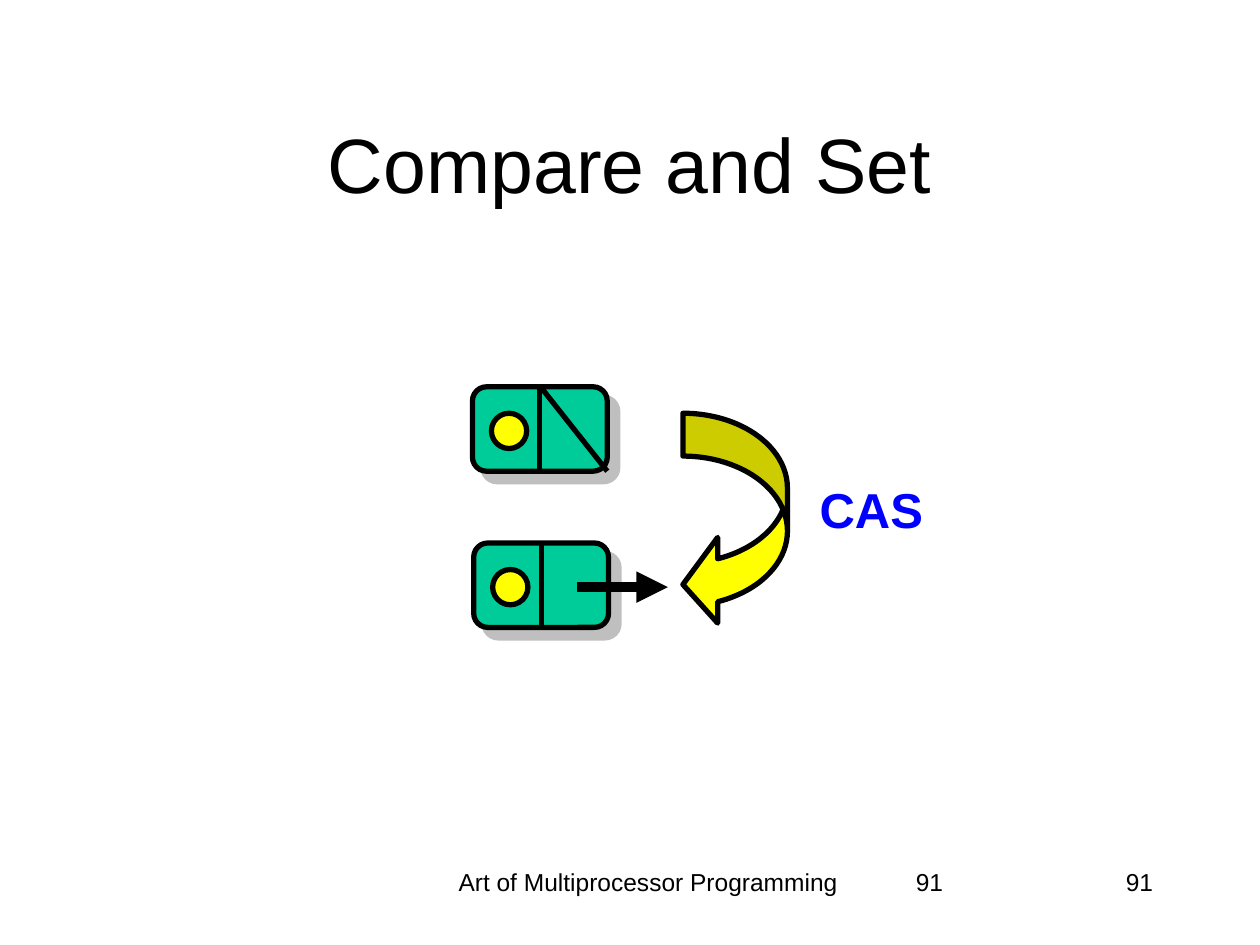
from lxml.etree import SubElement
from pptx import Presentation
from pptx.dml.color import RGBColor
from pptx.enum.shapes import MSO_CONNECTOR, MSO_SHAPE
from pptx.enum.text import MSO_ANCHOR, PP_ALIGN
from pptx.oxml.ns import qn
from pptx.util import Inches, Pt

COLORS = {
    "ink": "000000",
    "node": "00CC99",
    "value": "FFFF00",
    "label": "0000FF",
    "shadow": "808080",
}
NODE_WIDTH, NODE_HEIGHT = 1.07, 0.67
VALUE_SIZE = 0.28


def color(name):
    return RGBColor.from_string(COLORS[name])


def write(frame, text, size=14, align=PP_ALIGN.LEFT, ink="ink", bold=False,
          anchor=MSO_ANCHOR.TOP, wrap=True):
    frame.word_wrap = wrap
    frame.vertical_anchor = anchor
    paragraph = frame.paragraphs[0]
    paragraph.alignment = align
    run = paragraph.add_run()
    run.text = text
    run.font.name = "Arial"
    run.font.size = Pt(size)
    run.font.bold = bold
    run.font.color.rgb = color(ink)


def add_text(slide, box, text, **style):
    label = slide.shapes.add_textbox(*map(Inches, box))
    write(label.text_frame, text, **style)


def add_outlined(slide, preset, box, fill, adjustments=()):
    outlined = slide.shapes.add_shape(preset, *map(Inches, box))
    outlined.shadow.inherit = False
    outlined.fill.solid()
    outlined.fill.fore_color.rgb = color(fill)
    outlined.line.color.rgb = color("ink")
    outlined.line.width = Pt(3)
    for index, value in enumerate(adjustments):
        outlined.adjustments[index] = value
    return outlined


def add_drop_shadow(node):
    effects = node._element.spPr.find(qn("a:effectLst"))
    shadow = SubElement(effects, qn("a:outerShdw"), blurRad="0", dist=str(Pt(8.5)),
                        dir="2700000", algn="ctr", rotWithShape="0")
    tint = SubElement(shadow, qn("a:srgbClr"), val=COLORS["shadow"])
    SubElement(tint, qn("a:alpha"), val="50000")


def add_line(slide, start, end, width=3, arrow=False):
    line = slide.shapes.add_connector(
        MSO_CONNECTOR.STRAIGHT, *map(Inches, (*start, *end)))
    line.line.color.rgb = color("ink")
    line.line.width = Pt(width)
    if arrow:
        SubElement(line.line._get_or_add_ln(), qn("a:tailEnd"), type="triangle")
    SubElement(line._element.spPr, qn("a:effectLst"))


def add_list_node(slide, left, top):
    middle, bottom = left + NODE_WIDTH / 2, top + NODE_HEIGHT
    node = add_outlined(slide, MSO_SHAPE.ROUNDED_RECTANGLE,
                        (left, top, NODE_WIDTH, NODE_HEIGHT), "node", [0.167])
    add_drop_shadow(node)
    add_line(slide, (middle, top), (middle, bottom))
    add_outlined(slide, MSO_SHAPE.OVAL,
                 (left + 0.15, top + 0.21, VALUE_SIZE, VALUE_SIZE), "value")


def main():
    presentation = Presentation()
    presentation.slide_width = Inches(10)
    presentation.slide_height = Inches(7.5)
    slide = presentation.slides.add_slide(presentation.slide_layouts[5])

    title = slide.shapes.title
    title.left, title.top = Inches(0.75), Inches(0.67)
    title.width, title.height = Inches(8.5), Inches(1.25)
    write(title.text_frame, "Compare and Set", size=44, align=PP_ALIGN.CENTER,
          anchor=MSO_ANCHOR.MIDDLE)

    add_text(slide, (3.42, 6.83, 3.45, 0.5), "Art of Multiprocessor Programming",
             align=PP_ALIGN.CENTER)
    for align in (PP_ALIGN.LEFT, PP_ALIGN.RIGHT):
        add_text(slide, (7.17, 6.83, 2.08, 0.5), "91", align=align)

    add_list_node(slide, 3.76, 4.31)
    add_line(slide, (4.58, 4.66), (5.3, 4.66), width=6, arrow=True)
    add_list_node(slide, 3.75, 3.07)
    add_line(slide, (4.29, 3.07), (4.82, 3.74))

    add_outlined(slide, MSO_SHAPE.CURVED_LEFT_ARROW, (5.42, 3.28, 0.83, 1.7),
                 "value", [0.41, 0.82, 0.333])
    add_text(slide, (6.4, 3.76, 1.03, 0.57), "CAS", size=28, bold=True,
             align=PP_ALIGN.CENTER, ink="label", wrap=False)

    presentation.save("out.pptx")


if __name__ == "__main__":
    main()
